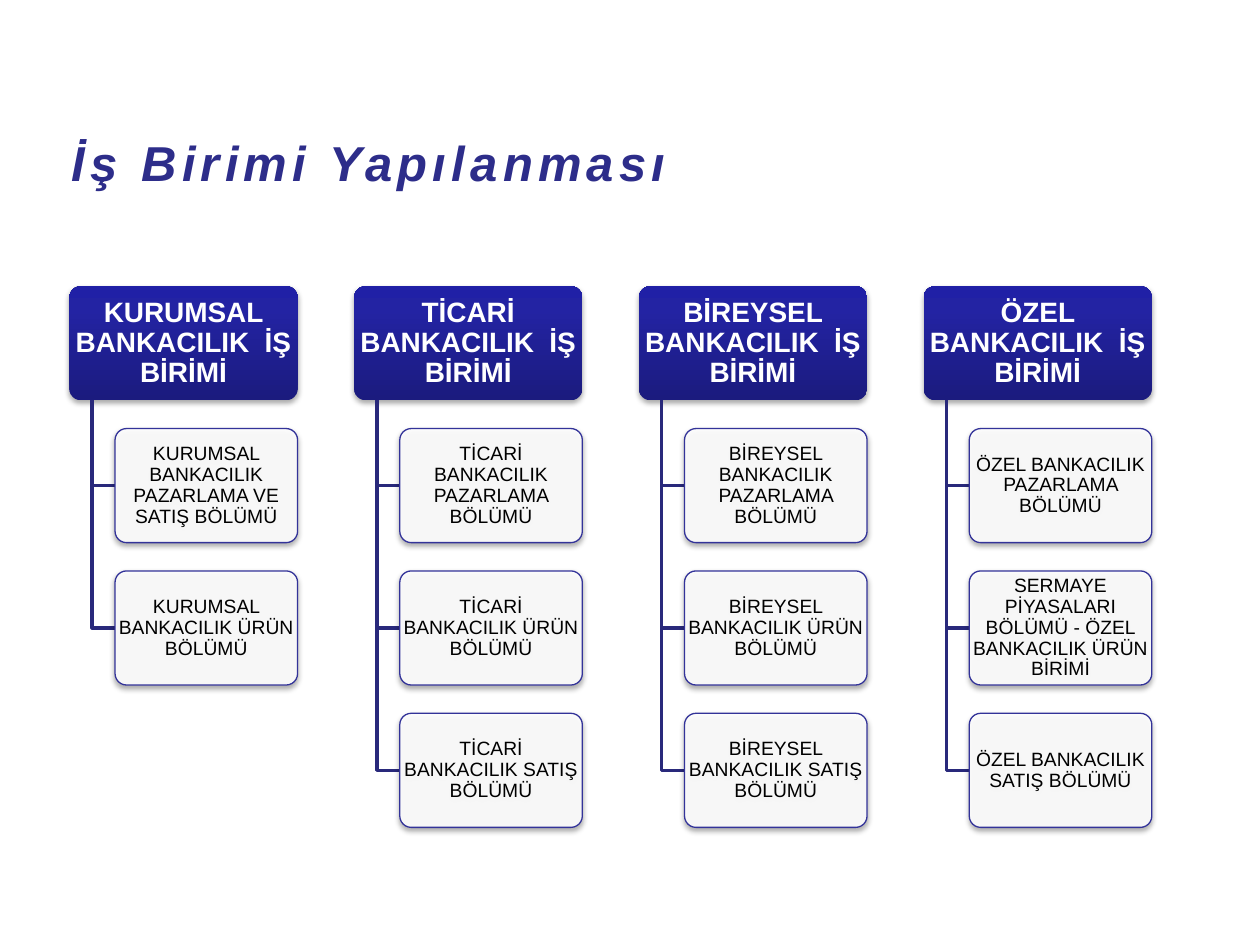
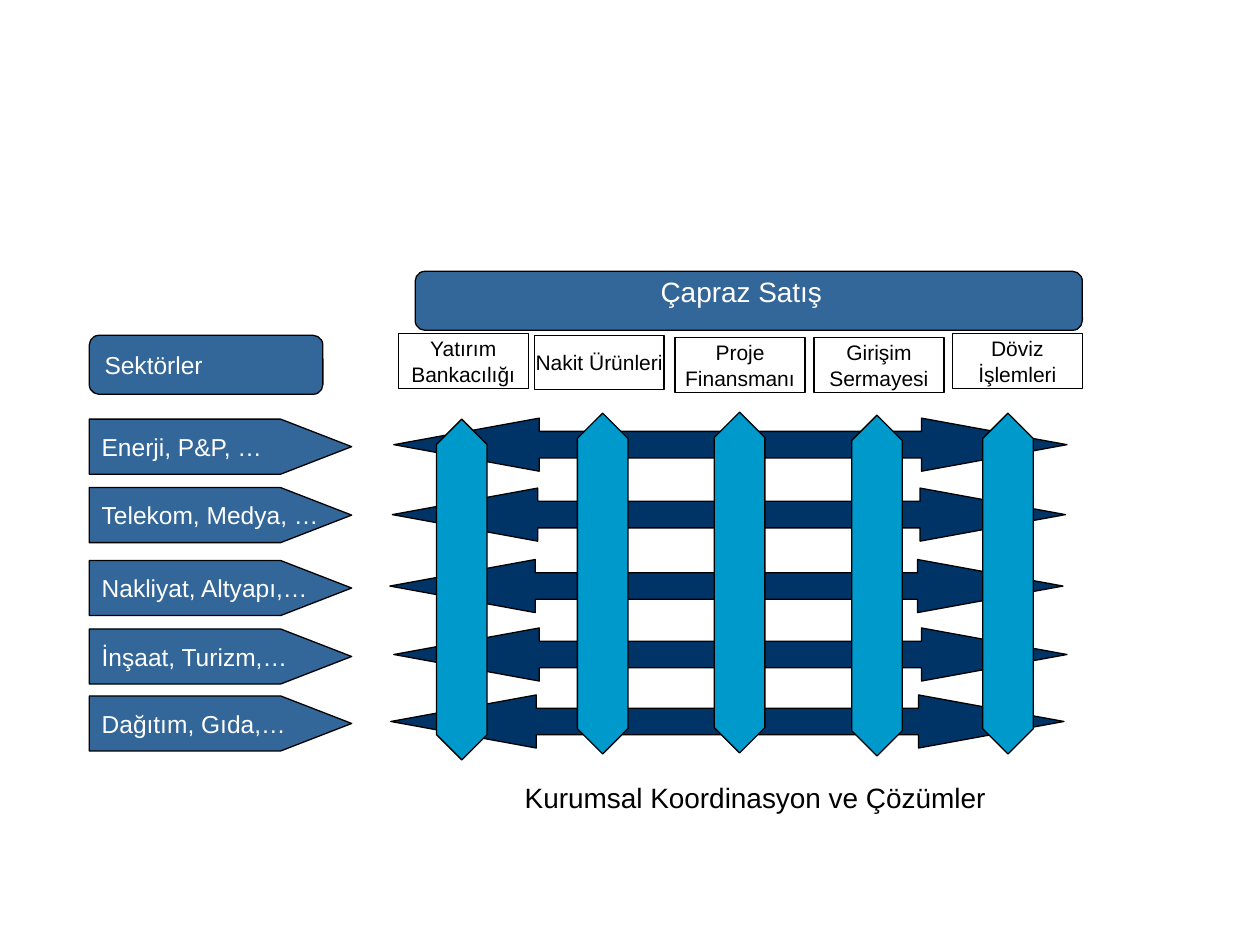
"""Build two slides on the business units of a bank and their cross-selling matrix."""
from pptx import Presentation
from pptx.dml.color import RGBColor
from pptx.enum.shapes import MSO_SHAPE as Shape
from pptx.enum.text import MSO_ANCHOR as Anchor, MSO_AUTO_SIZE as AutoSize, PP_ALIGN as Align
from pptx.oxml import parse_xml
from pptx.oxml.ns import nsdecls, qn
from pptx.util import Cm, Pt

FONT = "Arial"
WHITE = RGBColor(0xFF, 0xFF, 0xFF)
BLACK = RGBColor(0x00, 0x00, 0x00)
TITLE_BLUE = RGBColor(0x2D, 0x2D, 0x8A)
BORDER_BLUE = RGBColor(0x33, 0x33, 0x99)
BRANCH_BLUE = RGBColor(0x29, 0x29, 0x7B)
UNIT_DARK = RGBColor(0x1B, 0x1B, 0x7E)
UNIT_LIGHT = RGBColor(0x23, 0x23, 0xA3)
UNIT_TOP = RGBColor(0x20, 0x20, 0xA6)
STEEL = RGBColor(0x33, 0x66, 0x99)
NAVY = RGBColor(0x00, 0x33, 0x66)
CYAN = RGBColor(0x00, 0x99, 0xCC)


def write(box, text, size=12, color=BLACK, bold=False, italic=False, align=Align.CENTER,
          anchor=Anchor.MIDDLE, wrap=True, insets=(0.25, 0.13, 0.25, 0.13), line_spacing=None):
    """Put formatted text in a shape; insets are left, top, right, bottom in cm."""
    frame = box.text_frame
    frame.text = text
    frame.auto_size = AutoSize.NONE
    frame.word_wrap = wrap
    frame.vertical_anchor = anchor
    frame.margin_left, frame.margin_top, frame.margin_right, frame.margin_bottom = map(Cm, insets)
    for para in frame.paragraphs:
        para.alignment = align
        para.line_spacing = line_spacing
        for span in para.runs:
            font = span.font
            font.name, font.size, font.bold, font.italic = FONT, Pt(size), bold, italic
            font.color.rgb = color


def draw(page, kind, left, top, width, height, fill=None, line=BLACK, adjust=(), shadow=False):
    """Add a preset shape; lengths are in cm."""
    shape = page.shapes.add_shape(kind, Cm(left), Cm(top), Cm(width), Cm(height))
    for index, value in enumerate(adjust):
        shape.adjustments[index] = value
    if fill is None:
        shape.fill.background()
    else:
        shape.fill.solid()
        shape.fill.fore_color.rgb = fill
    if line is None:
        shape.line.fill.background()
    else:
        shape.line.color.rgb = line
        shape.line.width = Pt(0.75)
    shape.shadow.inherit = False
    if shadow:
        shape._element.spPr.find(qn("a:effectLst")).append(parse_xml(
            f'<a:outerShdw {nsdecls("a")} blurRad="40000" dist="23000" dir="5400000" rotWithShape="0">'
            '<a:srgbClr val="000000"><a:alpha val="35000"/></a:srgbClr></a:outerShdw>'))
    return shape


deck = Presentation()
deck.slide_width, deck.slide_height = Cm(25.4), Cm(19.05)

page = deck.slides.add_slide(deck.slide_layouts[5])
title = page.shapes.title
title.left, title.top, title.width, title.height = Cm(1.19), Cm(2.59), Cm(22.94), Cm(1.35)
write(title, "İş Birimi Yapılanması", size=28, color=TITLE_BLUE, bold=True, italic=True,
      align=Align.LEFT)
title.text_frame.paragraphs[0].runs[0].font._element.set("spc", "300")

UNITS = {
    "KURUMSAL BANKACILIK  İŞ BİRİMİ": [
        "KURUMSAL BANKACILIK PAZARLAMA VE SATIŞ BÖLÜMÜ",
        "KURUMSAL BANKACILIK ÜRÜN BÖLÜMÜ"],
    "TİCARİ BANKACILIK  İŞ BİRİMİ": [
        "TİCARİ BANKACILIK PAZARLAMA BÖLÜMÜ",
        "TİCARİ BANKACILIK ÜRÜN BÖLÜMÜ",
        "TİCARİ BANKACILIK SATIŞ BÖLÜMÜ"],
    "BİREYSEL BANKACILIK  İŞ BİRİMİ": [
        "BİREYSEL BANKACILIK PAZARLAMA BÖLÜMÜ",
        "BİREYSEL BANKACILIK ÜRÜN BÖLÜMÜ",
        "BİREYSEL BANKACILIK SATIŞ BÖLÜMÜ"],
    "ÖZEL BANKACILIK  İŞ BİRİMİ": [
        "ÖZEL BANKACILIK PAZARLAMA BÖLÜMÜ",
        "SERMAYE PİYASALARI BÖLÜMÜ - ÖZEL BANKACILIK ÜRÜN BİRİMİ",
        "ÖZEL BANKACILIK SATIŞ BÖLÜMÜ"],
}
UNIT_TOP_EDGE, UNIT_WIDTH, BOX_HEIGHT = 5.77, 4.6, 2.3
COLUMN_STEP, ROW_STEP, INDENT = 5.74, 2.87, 0.92
NO_INSETS = (0, 0, 0, 0)

for column, (unit, departments) in enumerate(UNITS.items()):
    left = 1.4 + column * COLUMN_STEP
    head = draw(page, Shape.ROUNDED_RECTANGLE, left, UNIT_TOP_EDGE, UNIT_WIDTH, BOX_HEIGHT,
                fill=UNIT_LIGHT, line=None, adjust=[0.1], shadow=True)
    head.fill.gradient()
    head.fill.gradient_angle = 90
    for stop, color, position in zip(head.fill.gradient_stops, (UNIT_DARK, UNIT_LIGHT), (0, 0.8)):
        stop.color.rgb = color
        stop.position = position
    head._element.spPr.find(".//" + qn("a:gsLst")).append(parse_xml(
        f'<a:gs {nsdecls("a")} pos="100000"><a:srgbClr val="{UNIT_TOP}"/></a:gs>'))
    write(head, unit, size=16, color=WHITE, bold=True, insets=NO_INSETS, line_spacing=0.9)

    for row, department in enumerate(departments, start=1):
        top = UNIT_TOP_EDGE + row * ROW_STEP
        spine, middle = Cm(left + INDENT / 2), Cm(top + BOX_HEIGHT / 2)
        outline = page.shapes.build_freeform(spine, Cm(UNIT_TOP_EDGE + BOX_HEIGHT))
        outline.add_line_segments([(spine, middle), (Cm(left + INDENT), middle)], close=False)
        branch = outline.convert_to_shape()
        branch.fill.background()
        branch.line.color.rgb = BRANCH_BLUE
        branch.line.width = Pt(2)
        branch.shadow.inherit = False

        box = draw(page, Shape.ROUNDED_RECTANGLE, left + INDENT, top, UNIT_WIDTH - INDENT,
                   BOX_HEIGHT, fill=WHITE, line=BORDER_BLUE, adjust=[0.1], shadow=True)
        box._element.spPr.find(qn("a:solidFill"))[0].append(
            parse_xml(f'<a:alpha {nsdecls("a")} val="90000"/>'))
        write(box, department, size=11, insets=NO_INSETS, line_spacing=0.9)

page = deck.slides.add_slide(deck.slide_layouts[6])

SECTORS = [
    ("Enerji, P&P, …", 8.45, 7.94, 8.43),
    ("Telekom, Medya, …", 9.83, 7.91, 9.84),
    ("Nakliyat, Altyapı,…", 11.3, 7.86, 11.28),
    ("İnşaat, Turizm,…", 12.68, 7.94, 12.66),
    ("Dağıtım, Gıda,…", 14.03, 7.88, 14.01),
]
for sector, top, arrow_left, arrow_top in SECTORS:
    draw(page, Shape.LEFT_RIGHT_ARROW, arrow_left, arrow_top, 13.57, 1.07, fill=NAVY,
         adjust=[0.5, 2.74])
    label = draw(page, Shape.PENTAGON, 1.8, top, 5.29, 1.11, fill=STEEL, adjust=[1.29])
    write(label, sector, size=14, color=WHITE, align=Align.LEFT, wrap=False)

sector_header = draw(page, Shape.ROUNDED_RECTANGLE, 1.8, 6.76, 4.71, 1.19, fill=STEEL)
write(sector_header, "Sektörler", size=14, color=WHITE, align=Align.LEFT, wrap=False)
sales_header = draw(page, Shape.ROUNDED_RECTANGLE, 8.37, 5.47, 13.45, 1.19, fill=STEEL)
write(sales_header, "Çapraz Satış", size=16, color=WHITE, anchor=Anchor.TOP,
      insets=(0, 0, 0.3, 0))

PRODUCTS = [
    ("Yatırım\nBankacılığı", 8.03, 6.73, 8.8, 8.45),
    ("Nakit Ürünleri", 10.77, 6.76, 11.64, 8.33),
    ("Proje\nFinansmanı", 13.61, 6.81, 14.4, 8.31),
    ("Girişim\nSermayesi", 16.41, 6.81, 17.17, 8.37),
    ("Döviz\nİşlemleri", 19.2, 6.73, 19.81, 8.33),
]
for product, left, top, arrow_left, arrow_top in PRODUCTS:
    label = draw(page, Shape.RECTANGLE, left, top, 2.62, 1.1)
    write(label, product, wrap=False)
    draw(page, Shape.UP_DOWN_ARROW, arrow_left, arrow_top, 1.02, 6.87, fill=CYAN,
         adjust=[0.5, 1.25])

caption = page.shapes.add_textbox(Cm(8.89), Cm(15.6), Cm(12.67), Cm(0.94))
write(caption, "Kurumsal Koordinasyon ve Çözümler", size=16, anchor=Anchor.TOP)

deck.save("out.pptx")
